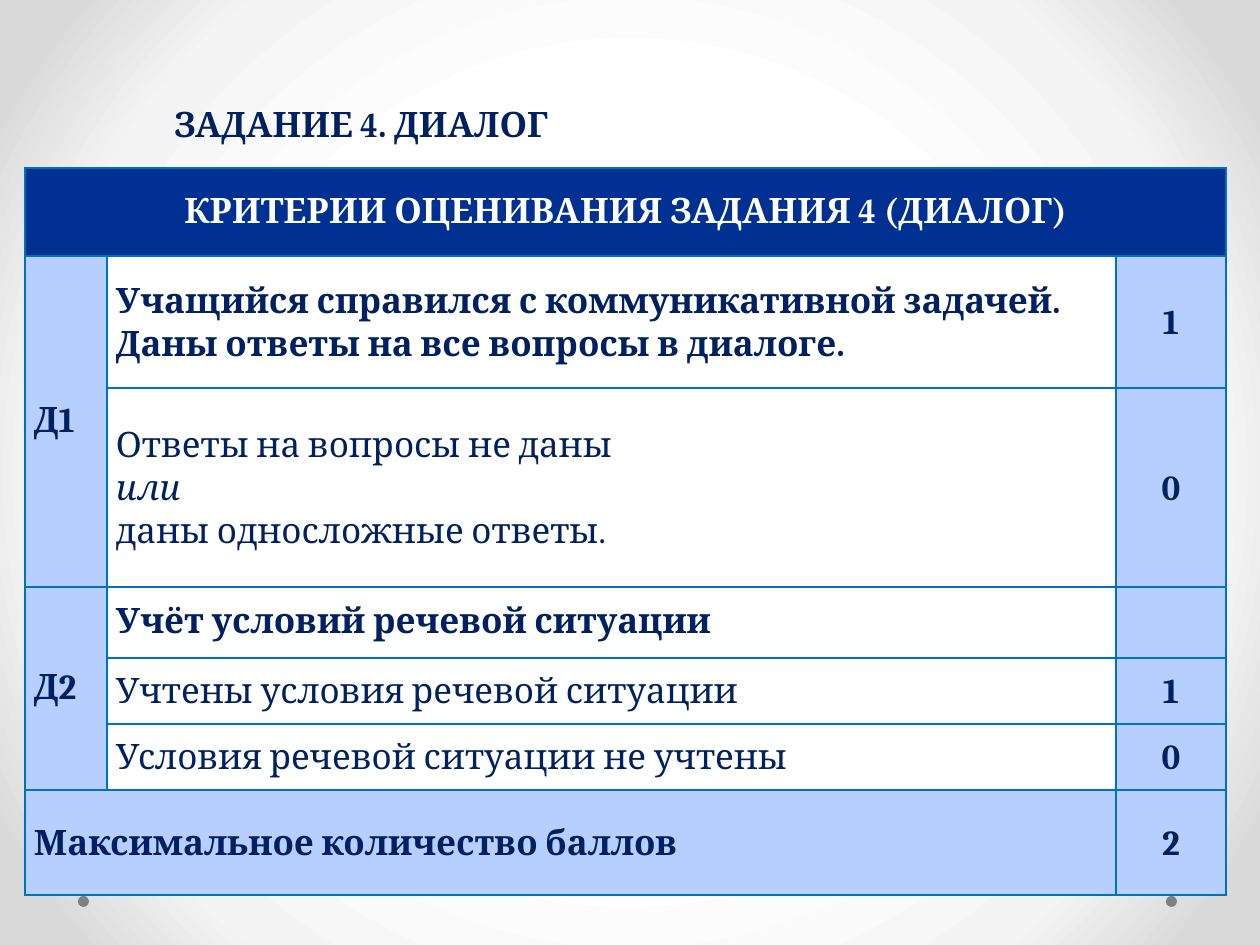
from typing import NamedTuple

from lxml import etree
from pptx import Presentation
from pptx.dml.color import RGBColor
from pptx.enum.shapes import MSO_SHAPE
from pptx.enum.text import MSO_ANCHOR, MSO_AUTO_SIZE, PP_ALIGN
from pptx.oxml import parse_xml
from pptx.oxml.ns import qn
from pptx.util import Emu, Pt

OVAL = MSO_SHAPE.OVAL
MIDDLE = MSO_ANCHOR.MIDDLE
NO_FIT = MSO_AUTO_SIZE.NONE
LEFT, CENTER, JUSTIFY = PP_ALIGN.LEFT, PP_ALIGN.CENTER, PP_ALIGN.JUSTIFY

PX_PER_INCH = 126
NAVY, BLUE, PALE, WHITE = "002060", "003192", "B7CFFF", "FFFFFF"
BORDER, GREY = "0070C0", "808080"
TEXT_FONT, DIGIT_FONT = "Cambria", "TeX Gyre Pagella"
A_NS = "http://schemas.openxmlformats.org/drawingml/2006/main"
P_NS = "http://schemas.openxmlformats.org/presentationml/2006/main"

COLS = [82, 1009, 110]
ROWS = [88, 132, 199, 71, 66, 66, 105]
BACKGROUND_STOPS = [(50, "FFFFFF"), (76, "F4F4F4"), (92, "DADADA")]


class Run(NamedTuple):
    text: str
    bold: bool = True
    italic: bool = False
    font: str = TEXT_FONT


class Cell(NamedTuple):
    row: int
    col: int
    paragraphs: list[list[Run]]
    fill: str = WHITE
    align: PP_ALIGN = JUSTIFY
    spacing: float = 1.07
    color: str = NAVY
    row_span: int = 1
    col_span: int = 1


def px(n: int) -> Emu:
    return Emu(round(n * 914400 / PX_PER_INCH))


def rgb(value: str) -> RGBColor:
    return RGBColor.from_string(value)


def add_runs(p, runs: list[Run], color: str) -> None:
    for run in runs:
        r = p.add_run()
        r.text = run.text
        r.font.size = Pt(20)
        r.font.name = run.font
        r.font.bold = run.bold
        r.font.italic = run.italic
        r.font.color.rgb = rgb(color)


def set_background(s) -> None:
    stops = "".join(
        f'<a:gs pos="{pos * 1000}"><a:srgbClr val="{color}"/></a:gs>'
        for pos, color in BACKGROUND_STOPS
    )
    bg = parse_xml(
        f'<p:bg xmlns:p="{P_NS}" xmlns:a="{A_NS}"><p:bgPr>'
        f'<a:gradFill rotWithShape="1"><a:gsLst>{stops}</a:gsLst>'
        '<a:path path="circle"><a:fillToRect l="50000" t="50000" r="50000" b="50000"/>'
        "</a:path></a:gradFill><a:effectLst/></p:bgPr></p:bg>"
    )
    s.element.cSld.insert(0, bg)


def add_dot(s, left: int) -> None:
    sp = s.shapes.add_shape(OVAL, px(left), px(896), px(11), px(11))
    sp.shadow.inherit = False
    sp.fill.solid()
    sp.fill.fore_color.rgb = rgb(GREY)
    sp.line.fill.background()


def set_title(s) -> None:
    sp = s.shapes.title
    sp.left, sp.top, sp.width, sp.height = px(174), px(55), px(1062), px(77)
    tf = sp.text_frame
    tf.word_wrap = True
    tf.auto_size = NO_FIT
    tf.vertical_anchor = MIDDLE
    tf.margin_left = tf.margin_right = tf.margin_top = tf.margin_bottom = 0
    p = tf.paragraphs[0]
    p.alignment = LEFT
    p.line_spacing = Pt(58)
    add_runs(p, [Run("ЗАДАНИЕ "), Run("4", font=DIGIT_FONT), Run(". ДИАЛОГ")], NAVY)


def style_cell(cell, fill: str) -> None:
    tc_pr = cell._tc.get_or_add_tcPr()
    for side in ("a:lnL", "a:lnR", "a:lnT", "a:lnB"):
        ln = etree.SubElement(tc_pr, qn(side), w=str(Pt(1)))
        solid = etree.SubElement(ln, qn("a:solidFill"))
        etree.SubElement(solid, qn("a:srgbClr"), val=BORDER)
    cell.fill.solid()
    cell.fill.fore_color.rgb = rgb(fill)
    cell.vertical_anchor = MIDDLE
    cell.margin_left = cell.margin_right = px(9)
    cell.margin_top = cell.margin_bottom = 0


def fill_cell(table, spec_cell: Cell) -> None:
    row, col = spec_cell.row, spec_cell.col
    last_row = row + spec_cell.row_span - 1
    last_col = col + spec_cell.col_span - 1
    cell = table.cell(row, col)
    if (last_row, last_col) != (row, col):
        cell.merge(table.cell(last_row, last_col))
    for i in range(row, last_row + 1):
        for j in range(col, last_col + 1):
            style_cell(table.cell(i, j), spec_cell.fill)
    tf = cell.text_frame
    for i, runs in enumerate(spec_cell.paragraphs):
        p = tf.paragraphs[0] if i == 0 else tf.add_paragraph()
        p.alignment = spec_cell.align
        p.line_spacing = spec_cell.spacing
        add_runs(p, runs, spec_cell.color)


def score(row: int, value: str) -> Cell:
    return Cell(row, 2, [[Run(value)]] if value else [], PALE, CENTER)


def criterion(row: int, name: str, row_span: int) -> Cell:
    return Cell(row, 0, [[Run(name)]], PALE, LEFT, 1.0, row_span=row_span)


CELLS = [
    Cell(0, 0, [[Run("КРИТЕРИИ ОЦЕНИВАНИЯ ЗАДАНИЯ "), Run("4", font=DIGIT_FONT),
                 Run(" (ДИАЛОГ)")]], BLUE, CENTER, 1.0, WHITE, col_span=3),
    criterion(1, "Д1", 2),
    Cell(1, 1, [[Run("Учащийся справился с коммуникативной задачей.")],
                [Run("Даны ответы на все вопросы в диалоге.")]]),
    Cell(2, 1, [[Run("Ответы на вопросы не даны", False)],
                [Run("или", False, True)],
                [Run("даны односложные ответы.", False)]]),
    criterion(3, "Д2", 3),
    Cell(3, 1, [[Run("Учёт условий речевой ситуации")]], align=LEFT, spacing=1.0),
    Cell(4, 1, [[Run("Учтены условия речевой ситуации", False)]]),
    Cell(5, 1, [[Run("Условия речевой ситуации не учтены", False)]]),
    Cell(6, 0, [[Run("Максимальное количество баллов")]], PALE, col_span=2),
    *(score(i, value) for i, value in enumerate(["1", "0", "", "1", "0", "2"], 1)),
]


def add_criteria_table(s) -> None:
    frame = s.shapes.add_table(len(ROWS), len(COLS), px(25), px(168),
                               px(sum(COLS)), px(sum(ROWS)))
    table = frame.table
    table.first_row = table.horz_banding = False
    for column, width in zip(table.columns, COLS):
        column.width = px(width)
    for row, height in zip(table.rows, ROWS):
        row.height = px(height)
    for spec_cell in CELLS:
        fill_cell(table, spec_cell)


def main() -> None:
    prs = Presentation()
    prs.slide_width, prs.slide_height = px(1260), px(945)
    s = prs.slides.add_slide(prs.slide_layouts[5])
    set_background(s)
    for left in (1166, 78):
        add_dot(s, left)
    add_criteria_table(s)
    set_title(s)
    prs.save("out.pptx")


if __name__ == "__main__":
    main()
